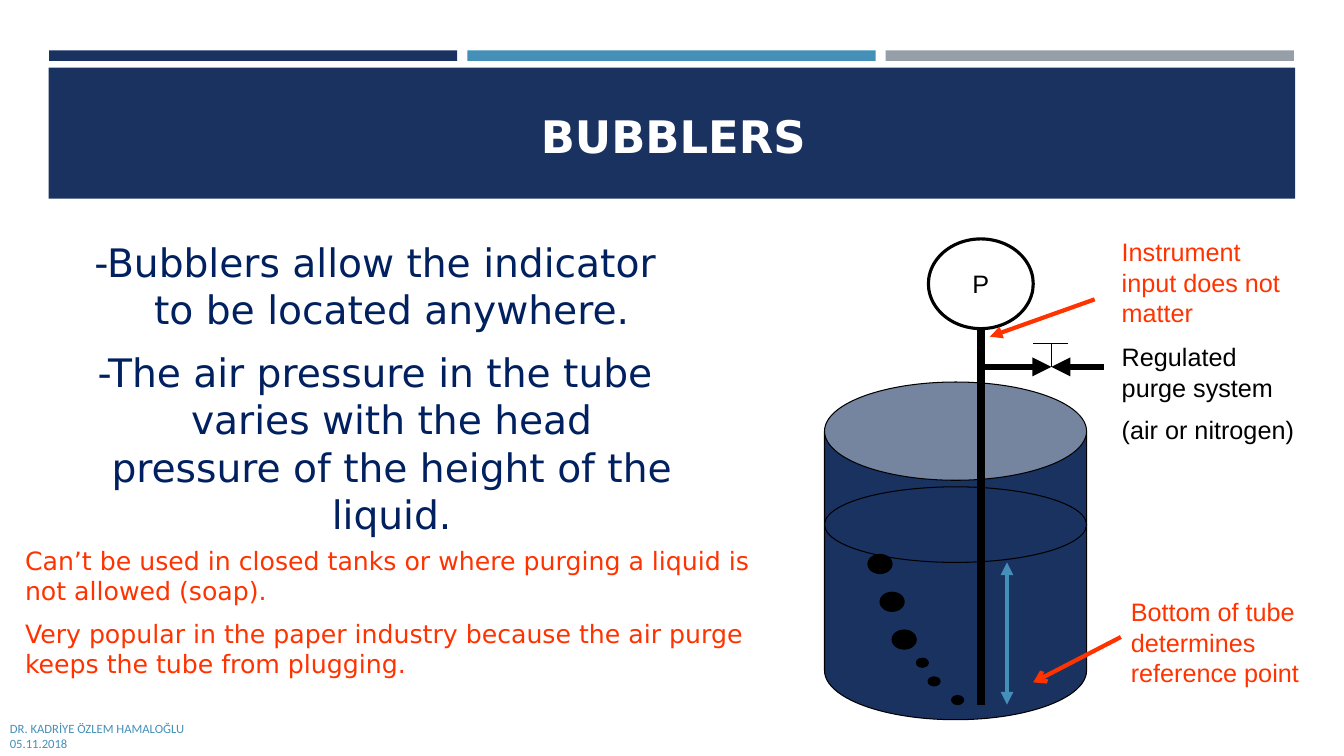
from lxml.etree import SubElement
from pptx import Presentation
from pptx.dml.color import RGBColor
from pptx.enum.shapes import MSO_CONNECTOR, MSO_SHAPE as SHAPE
from pptx.enum.text import MSO_ANCHOR as ANCHOR, PP_ALIGN as ALIGN
from pptx.oxml.ns import qn
from pptx.util import Inches, Pt

NAVY = RGBColor(0x1A, 0x32, 0x60)
BLUE = RGBColor(0x45, 0x90, 0xB8)
GRAY = RGBColor(0x96, 0x9F, 0xA7)
INK = RGBColor(0x00, 0x20, 0x60)
RED = RGBColor(0xFF, 0x33, 0x00)
BLACK = RGBColor(0, 0, 0)
WHITE = RGBColor(255, 255, 255)

deck = Presentation()
deck.slide_width, deck.slide_height = Inches(13.33), Inches(7.5)
slide = deck.slides.add_slide(deck.slide_layouts[6])

# Grid of 40 columns by 30 rows
COL, ROW = deck.slide_width / 40, deck.slide_height / 30


def draw(kind, left, top, width, height, fill=None, line_width=0.75):
    shape = slide.shapes.add_shape(kind, int(left * COL), int(top * ROW),
                                   int(width * COL), int(height * ROW))
    shape.shadow.inherit = False
    if fill is None:
        shape.fill.background()
    else:
        shape.fill.solid()
        shape.fill.fore_color.rgb = fill
    if line_width:
        shape.line.color.rgb = BLACK
        shape.line.width = Pt(line_width)
    else:
        shape.line.fill.background()
    return shape


def write(frame, lines, size, font, color, align=ALIGN.LEFT, before=0,
          anchor=ANCHOR.TOP):
    frame.word_wrap = True
    frame.vertical_anchor = anchor
    for number, line in enumerate(lines):
        paragraph = frame.add_paragraph() if number else frame.paragraphs[0]
        paragraph.text = line
        paragraph.alignment = align
        if number:
            paragraph.space_before = Pt(before)
        paragraph.font.size = Pt(size)
        paragraph.font.name = font
        paragraph.font.color.rgb = color


# Header bars and banner
for index, color in enumerate((NAVY, BLUE, GRAY)):
    draw(SHAPE.RECTANGLE, 1.46 + index * 12.45, 2, 12.15, 0.42, color, 0)
draw(SHAPE.RECTANGLE, 1.45, 2.68, 37.1, 5.2, NAVY, 0)

# Tank with the liquid surface
tank = draw(SHAPE.CAN, 24.54, 15.16, 7.8, 13.4, NAVY)
tank.adjustments[0] = 0.375
draw(SHAPE.OVAL, 24.54, 19.32, 7.8, 3)

# Bubbles rising from the tube
for step in range(3):
    draw(SHAPE.OVAL, 25.83 + step * 0.36, 22 + step * 1.5, 0.72, 0.76, BLACK)
for step, row in ((0, 0), (1, 1), (3, 2)):
    draw(SHAPE.OVAL, 27.27 + step * 0.35, 26.12 + row * 0.74, 0.36, 0.36, BLACK)

# Pressure gauge
gauge = draw(SHAPE.OVAL, 27.63, 9.48, 3.12, 3.56, line_width=2.25)
write(gauge.text_frame, ["P"], 18, "Arial", BLACK, ALIGN.CENTER,
      anchor=ANCHOR.MIDDLE)
gauge.text_frame.word_wrap = False

# Tube, purge valve and arrows: start, end, colour, width, arrowheads
TUBE, VALVE, PURGE, HANDLE, TIP = 29.19, 31.29, 14.56, 13.64, 27.96
END = {"tailEnd": "triangle"}
BOTH = {"headEnd": "triangle", "tailEnd": "triangle"}
for x1, y1, x2, y2, color, width, heads in (
        (TUBE, 13.04, TUBE, TIP, BLACK, 6, {}),
        (TUBE, PURGE, VALVE, PURGE, BLACK, 4.5, END),
        (32.85, PURGE, VALVE, PURGE, BLACK, 4.5, END),
        (VALVE, PURGE, VALVE, HANDLE, BLACK, 0.75, {}),
        (30.75, HANDLE, 31.8, HANDLE, BLACK, 0.75, {}),
        (32.58, 11.88, 29.46, 13.36, RED, 3, END),
        (33.36, 25.28, 30.75, 27.08, RED, 3, {"tailEnd": "arrow"}),
        (29.97, 22.32, 29.97, TIP, BLUE, 3, BOTH)):
    connector = slide.shapes.add_connector(
        MSO_CONNECTOR.STRAIGHT, int(x1 * COL), int(y1 * ROW),
        int(x2 * COL), int(y2 * ROW))
    connector.line.color.rgb = color
    connector.line.width = Pt(width)
    outline = connector.line._get_or_add_ln()
    for end, head in heads.items():
        SubElement(outline, qn("a:" + end), type=head)
    SubElement(connector._element.spPr, qn("a:effectLst"))

# Texts: box, lines, size, font, colour, alignment, space before, anchor
frames = []
for box, *style in (
        ((11.67, 4.16, 16.74, 2.48), ["BUBBLERS"],
         32, "DejaVu Sans", WHITE, ALIGN.CENTER, 0, ANCHOR.BOTTOM),
        ((1.95, 6.88, 18.42, 17),
         ["-Bubblers allow the indicator to be located anywhere.",
          "-The air pressure in the tube varies with the head pressure "
          "of the height of the liquid."],
         28, "DejaVu Sans", INK, ALIGN.CENTER, 5.6, ANCHOR.MIDDLE),
        ((33.09, 9.2, 5.46, 3.6), ["Instrument input does not matter"],
         18, "Arial", RED),
        ((33.09, 13.36, 5.97, 4.12),
         ["Regulated purge system", "(air or nitrogen)"],
         18, "Arial", BLACK, ALIGN.LEFT, 9),
        ((33.36, 23.48, 6.24, 3.6),
         ["Bottom of tube determines reference point"], 18, "Arial", RED),
        ((0.45, 21.44, 22.17, 5.84),
         ["Can’t be used in closed tanks or where purging a liquid is "
          "not allowed (soap).",
          "Very popular in the paper industry because the air purge "
          "keeps the tube from plugging."],
         18, "DejaVu Sans", RED, ALIGN.LEFT, 9),
        ((0, 28.4, 22.68, 1.6), ["DR. KADRİYE ÖZLEM HAMALOĞLU", "05.11.2018"],
         9, "Calibri", BLUE, ALIGN.LEFT, 0, ANCHOR.MIDDLE)):
    left, top, width, height = box
    frame = slide.shapes.add_textbox(int(left * COL), int(top * ROW),
                                     int(width * COL),
                                     int(height * ROW)).text_frame
    write(frame, *style)
    frames.append(frame)

# Title weight and hanging indent of the statements
title, statements = frames[:2]
title.paragraphs[0].font.bold = True
for paragraph in statements.paragraphs:
    paragraph.space_after = Pt(6)
    properties = paragraph._p.get_or_add_pPr()
    properties.set("marL", str(Inches(0.33)))
    properties.set("indent", str(-Inches(0.33)))

deck.save("out.pptx")
